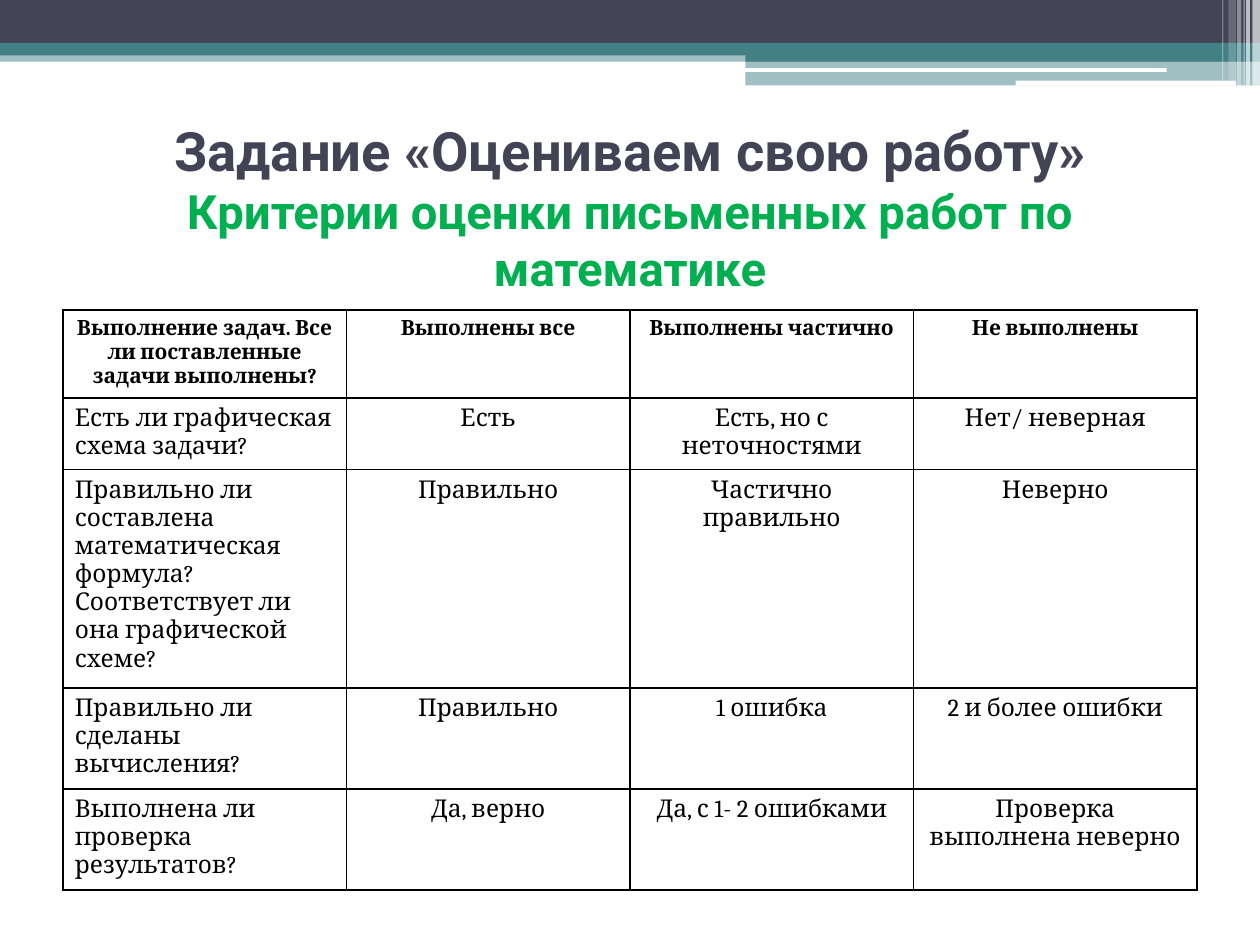
from lxml import etree
from pptx import Presentation
from pptx.dml.color import RGBColor
from pptx.enum import shapes, text
from pptx.oxml import ns
from pptx.util import Pt

COLORS = {
    "navy": "424456",
    "teal": "438086",
    "white": "FFFFFF",
    "green": "00B050",
    "black": "000000",
}
TITLE_FONT = "Roboto"
TABLE_FONT = "Cambria"

BANDS = [
    (0, 28.8, 720, 6.5, "teal", 50),
    (0, 0, 720, 24.5, "navy", 100),
    (0, 24.5, 720, 7.2, "teal", 100),
    (426, 28.1, 294, 7.2, "teal", 100),
    (426, 34.8, 294, 14, "teal", 50),
]
RULES = [(425.5, 38.9, 241.2, 2.2), (580.3, 46.1, 126, 2.9)]
STRIPES = [
    (715.7, 4.3, 49, 65),
    (712.1, 2.2, 49, 65),
    (710.6, 0.72, 49, 60),
    (707, 2.2, 49, 40),
    (702, 4.3, 46.1, 20),
    (698.4, 0.72, 46.1, 30),
]
ROW_HEIGHTS = [48.5, 39.4, 120, 55.4, 55.4]
CRITERIA = [
    ["Выполнение задач. Все ли поставленные задачи выполнены?",
     "Выполнены все", "Выполнены частично", "Не выполнены"],
    ["Есть ли графическая схема задачи?",
     "Есть", "Есть, но с неточностями", "Нет/ неверная"],
    ["Правильно ли составлена математическая формула? "
     "Соответствует ли она графической схеме?",
     "Правильно", "Частично правильно", "Неверно"],
    ["Правильно ли сделаны вычисления?",
     "Правильно", "1 ошибка", "2 и более ошибки"],
    ["Выполнена ли проверка результатов?",
     "Да, верно", "Да, с 1- 2 ошибками", "Проверка выполнена неверно"],
]


class Deck:
    def __init__(self, width, height):
        self.prs = Presentation()
        self.prs.slide_width, self.prs.slide_height = Pt(width), Pt(height)
        self.s = self.prs.slides.add_slide(self.prs.slide_layouts[6])

    def color(self, name):
        return RGBColor.from_string(COLORS[name])

    def style(self, r, font, size, color, bold):
        r.font.name, r.font.size, r.font.bold = font, Pt(size), bold
        r.font.color.rgb = self.color(color)

    def bar(self, x, y, w, h, color, opacity=100, rounded=False):
        kind = shapes.MSO_SHAPE.ROUNDED_RECTANGLE if rounded else shapes.MSO_SHAPE.RECTANGLE
        sp = self.s.shapes.add_shape(kind, Pt(x), Pt(y), Pt(w), Pt(h))
        sp.shadow.inherit = False
        sp.line.fill.background()
        sp.fill.solid()
        sp.fill.fore_color.rgb = self.color(color)
        if opacity < 100:
            clr = sp.fill._xPr.find(".//" + ns.qn("a:srgbClr"))
            etree.SubElement(clr, ns.qn("a:alpha"), val=str(opacity * 1000))

    def title(self, x, y, w, h, lines):
        tf = self.s.shapes.add_textbox(Pt(x), Pt(y), Pt(w), Pt(h)).text_frame
        tf.word_wrap = True
        tf.vertical_anchor = text.MSO_ANCHOR.MIDDLE
        p = tf.paragraphs[0]
        p.text = "\v".join(line for line, _, _ in lines)
        p.alignment = text.PP_ALIGN.CENTER
        for r, (_, size, color) in zip(p.runs, lines):
            self.style(r, TITLE_FONT, size, color, True)

    def border(self, cell, width):
        tcPr = cell._tc.get_or_add_tcPr()
        for i, side in enumerate(("lnL", "lnR", "lnT", "lnB")):
            ln = etree.Element(ns.qn("a:" + side), w=str(Pt(width)))
            fill = etree.SubElement(ln, ns.qn("a:solidFill"))
            etree.SubElement(fill, ns.qn("a:srgbClr"), val=COLORS["black"])
            tcPr.insert(i, ln)

    def table(self, x, y, w, heights, rows):
        frame = self.s.shapes.add_table(
            len(rows), len(rows[0]), Pt(x), Pt(y), Pt(w), Pt(sum(heights)))
        tbl = frame.table
        tbl.first_row = tbl.horz_banding = False
        for i, (height, row) in enumerate(zip(heights, rows)):
            tbl.rows[i].height = Pt(height)
            for j, value in enumerate(row):
                self.cell(tbl.cell(i, j), value, header=i == 0, centered=i == 0 or j > 0)

    def cell(self, cell, value, header, centered):
        cell.fill.background()
        cell.margin_left = cell.margin_right = Pt(6.75)
        cell.margin_top = cell.margin_bottom = Pt(3.6)
        cell.text_frame.text = value
        p = cell.text_frame.paragraphs[0]
        p.alignment = text.PP_ALIGN.CENTER if centered else text.PP_ALIGN.LEFT
        self.style(p.runs[0], TABLE_FONT, 12 if header else 14, "black", header)
        self.border(cell, 1)


def main():
    deck = Deck(720, 540)
    for band in BANDS:
        deck.bar(*band)
    for rule in RULES:
        deck.bar(*rule, "white", rounded=True)
    for x, w, h, opacity in STRIPES:
        deck.bar(x, 0, w, h, "white", opacity)
    deck.title(36, 62, 648, 112.3, [
        ("Задание «Оцениваем свою работу»", 31, "navy"),
        ("Критерии оценки письменных работ по математике", 27, "green"),
    ])
    deck.table(36, 177.1, 648, ROW_HEIGHTS, CRITERIA)
    deck.prs.save("out.pptx")


if __name__ == "__main__":
    main()
